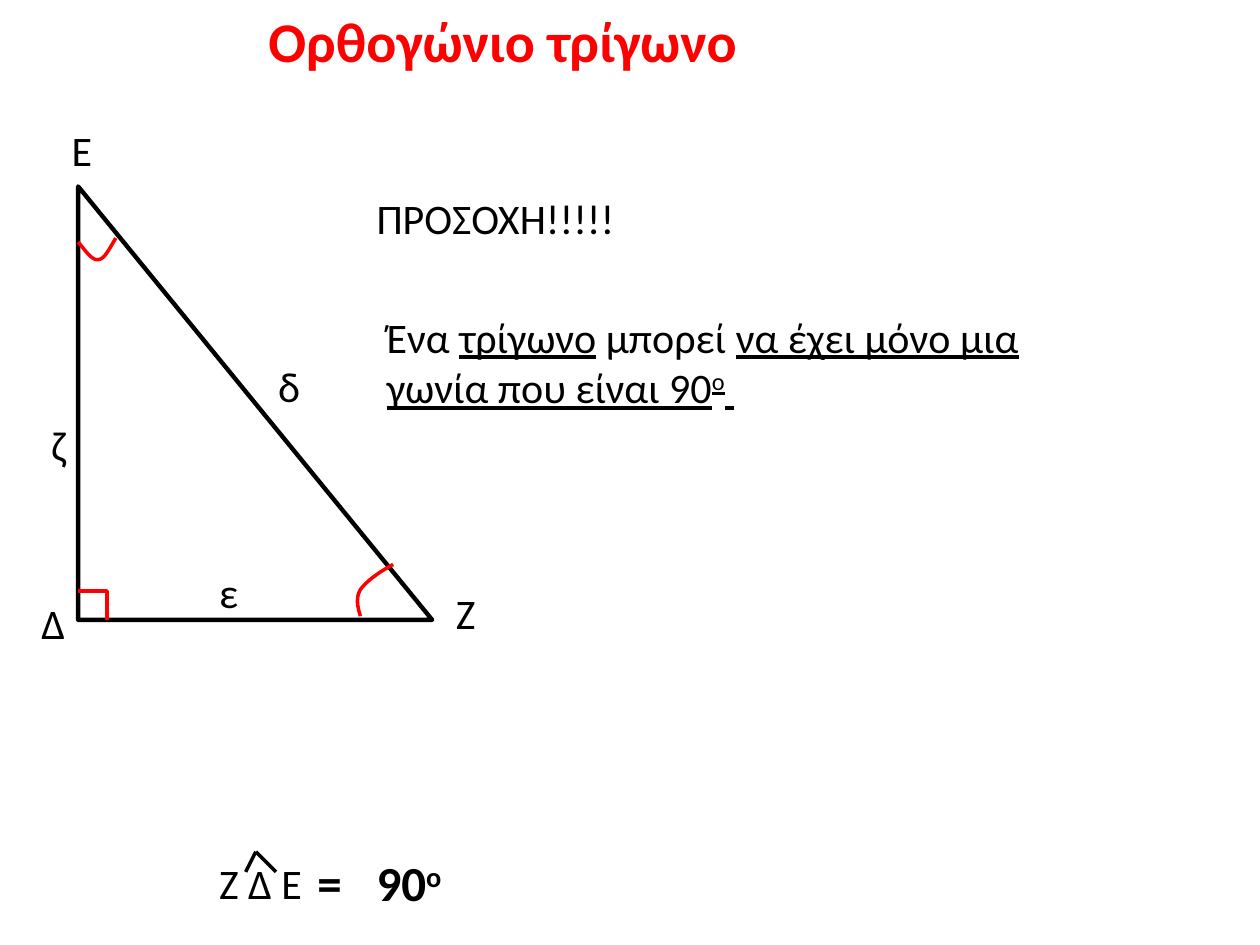
from dataclasses import dataclass, field
from typing import NamedTuple

from lxml.etree import SubElement
from pptx import Presentation
from pptx.dml.color import RGBColor
from pptx.enum.shapes import MSO_CONNECTOR, MSO_SHAPE
from pptx.enum.text import MSO_ANCHOR, MSO_AUTO_SIZE, PP_ALIGN
from pptx.oxml.ns import qn
from pptx.util import Inches, Pt

BLACK = RGBColor(0x00, 0x00, 0x00)
RED = RGBColor(0xFF, 0x00, 0x00)

COLUMNS, ROWS = 100, 75
SLIDE_WIDTH, SLIDE_HEIGHT = Inches(10), Inches(7.5)

FRAME_FORMAT = {
    "word_wrap": True,
    "auto_size": MSO_AUTO_SIZE.SHAPE_TO_FIT_TEXT,
    "vertical_anchor": MSO_ANCHOR.TOP,
    "margin_left": Inches(0.1),
    "margin_right": Inches(0.1),
    "margin_top": Inches(0.05),
    "margin_bottom": Inches(0.05),
}
PLAIN = {"name": "Calibri", "size": Pt(24), "bold": False}
VALUE = PLAIN | {"size": Pt(28), "bold": True}
HEADING = PLAIN | {"size": Pt(32), "bold": True}


class Point(NamedTuple):
    column: float
    row: float


class Piece(NamedTuple):
    wording: str
    underlined: bool = False
    raised: bool = False


@dataclass
class Label:
    corner: Point
    columns: float
    rows: float
    pieces: list[Piece]
    style: dict = field(default_factory=lambda: PLAIN)
    colour: RGBColor = BLACK


APEX = Point(6.2, 14.8)
RIGHT_CORNER = Point(6.2, 49.2)
FAR_CORNER = Point(34.3, 49.2)
MARK_SIZE = 2.3
HAT_TIP, HAT_BASE_ROW = Point(20.3, 67.6), 69.2

HEADING_LABEL = Label(Point(20.3, 0), 50, 6.4, [Piece("Ορθογώνιο τρίγωνο")], HEADING, RED)
EQUALITY = Label(Point(24.2, 67.2), 12.1, 5.7,
                 [Piece("=\t90"), Piece("ο", raised=True)], VALUE)
EQUALITY_TAB = 4.7
LABELS = [
    Label(Point(2.3, 46.9), 5.5, 5, [Piece("Δ")]),
    Label(Point(4.7, 9.4), 5.5, 5, [Piece("Ε")]),
    Label(Point(35.2, 46.1), 5.5, 5, [Piece("Ζ")]),
    Label(Point(16.4, 44.5), 3.8, 5, [Piece("ε")]),
    Label(Point(21.1, 28.1), 3.8, 5.2, [Piece("δ")]),
    Label(Point(3.1, 32.8), 3.8, 5.2, [Piece("ζ")]),
    Label(Point(28.9, 14.8), 43, 5, [Piece("ΠΡΟΣΟΧΗ!!!!!")]),
    Label(Point(29.7, 24.2), 59.4, 9.1, [
        Piece("Ένα "), Piece("τρίγωνο", True), Piece(" μπορεί "),
        Piece("να έχει μόνο μια γωνία που είναι 90", True),
        Piece("ο", True, True), Piece(" ", True),
    ]),
    Label(Point(16.4, 67.6), 10.9, 5, [Piece("Ζ Δ Ε")]),
]

# Each arc: a start point, then two handles and an end point per curve.
ACUTE_ARCS = [
    [Point(6.2, 19.2), Point(6.8, 19.9), Point(7.3, 20.7), Point(7.8, 20.6),
     Point(8.3, 20.6), Point(8.7, 19.7), Point(9.2, 18.9)],
    [Point(28.6, 48.9), Point(28.4, 48.2), Point(28.2, 47.5), Point(28.6, 46.8),
     Point(29.1, 46.1), Point(30.1, 45.4), Point(31.2, 44.8)],
]


def across(columns: float) -> int:
    return round(SLIDE_WIDTH * columns / COLUMNS)


def down(rows: float) -> int:
    return round(SLIDE_HEIGHT * rows / ROWS)


def place(point: Point) -> tuple[int, int]:
    return across(point.column), down(point.row)


def apply_format(target, values: dict) -> None:
    for attribute, value in values.items():
        setattr(target, attribute, value)


def style_outline(shape, colour: RGBColor, points: float) -> None:
    shape.line.color.rgb = colour
    shape.line.width = Pt(points)


def write_label(shape, label: Label) -> None:
    frame = shape.text_frame
    apply_format(frame, FRAME_FORMAT)
    paragraph = frame.paragraphs[0]
    paragraph.alignment = PP_ALIGN.LEFT
    for piece in label.pieces:
        run = paragraph.add_run()
        run.text = piece.wording
        apply_format(run.font, label.style | {"underline": piece.underlined})
        run.font.color.rgb = label.colour
        if piece.raised:
            run._r.get_or_add_rPr().set("baseline", "30000")
    apply_format(shape, {
        "left": across(label.corner.column), "top": down(label.corner.row),
        "width": across(label.columns), "height": down(label.rows),
    })


def add_label(slide, label: Label):
    box = slide.shapes.add_textbox(0, 0, across(label.columns), down(label.rows))
    write_label(box, label)
    return box


def set_tab_stop(box, columns: float) -> None:
    properties = box.text_frame.paragraphs[0]._p.get_or_add_pPr()
    stops = SubElement(properties, qn("a:tabLst"))
    SubElement(stops, qn("a:tab"), pos=str(across(columns)), algn="l")


def add_line(shapes, kind, start: Point, end: Point, colour: RGBColor):
    line = shapes.add_connector(kind, *place(start), *place(end))
    style_outline(line, colour, 2)
    SubElement(line._element.spPr, qn("a:effectLst"))
    return line


def add_triangle(slide) -> None:
    triangle = slide.shapes.add_shape(
        MSO_SHAPE.ISOSCELES_TRIANGLE, *place(APEX),
        across(FAR_CORNER.column - APEX.column), down(FAR_CORNER.row - APEX.row))
    triangle.adjustments[0] = 0
    triangle.shadow.inherit = False
    triangle.fill.background()
    style_outline(triangle, BLACK, 2.5)


def bezier(handles: list[Point], t: float) -> Point:
    weights = ((1 - t) ** 3, 3 * t * (1 - t) ** 2, 3 * t ** 2 * (1 - t), t ** 3)
    return Point(*(sum(w * v for w, v in zip(weights, axis)) for axis in zip(*handles)))


def add_arc(slide, knots: list[Point], steps: int = 12) -> None:
    curve = [place(bezier(knots[first:first + 4], step / steps))
             for first in range(0, len(knots) - 1, 3) for step in range(1, steps + 1)]
    builder = slide.shapes.build_freeform(*place(knots[0]))
    builder.add_line_segments(curve, close=False)
    arc = builder.convert_to_shape()
    arc.shadow.inherit = False
    arc.fill.background()
    style_outline(arc, RED, 2)


def add_right_angle_mark(slide) -> None:
    """Run level to the far end, then drop: the bend sits at the full width."""
    start = Point(RIGHT_CORNER.column, RIGHT_CORNER.row - MARK_SIZE)
    end = Point(RIGHT_CORNER.column + MARK_SIZE, RIGHT_CORNER.row)
    mark = add_line(slide.shapes, MSO_CONNECTOR.ELBOW, start, end, RED)
    guides = mark._element.spPr.find(qn("a:prstGeom")).find(qn("a:avLst"))
    SubElement(guides, qn("a:gd"), name="adj1", fmla="val 100000")


def add_angle_hat(slide) -> None:
    hat = slide.shapes.add_group_shape()
    for column in (19.5, 21.9):
        add_line(hat.shapes, MSO_CONNECTOR.STRAIGHT, HAT_TIP,
                 Point(column, HAT_BASE_ROW), BLACK)


def main() -> None:
    deck = Presentation()
    deck.slide_width, deck.slide_height = SLIDE_WIDTH, SLIDE_HEIGHT
    slide = deck.slides.add_slide(deck.slide_layouts.get_by_name("Title Only"))
    write_label(slide.shapes.title, HEADING_LABEL)
    add_triangle(slide)
    for knots in ACUTE_ARCS:
        add_arc(slide, knots)
    add_right_angle_mark(slide)
    for label in LABELS:
        add_label(slide, label)
    add_angle_hat(slide)
    set_tab_stop(add_label(slide, EQUALITY), EQUALITY_TAB)
    deck.save("out.pptx")


if __name__ == "__main__":
    main()
